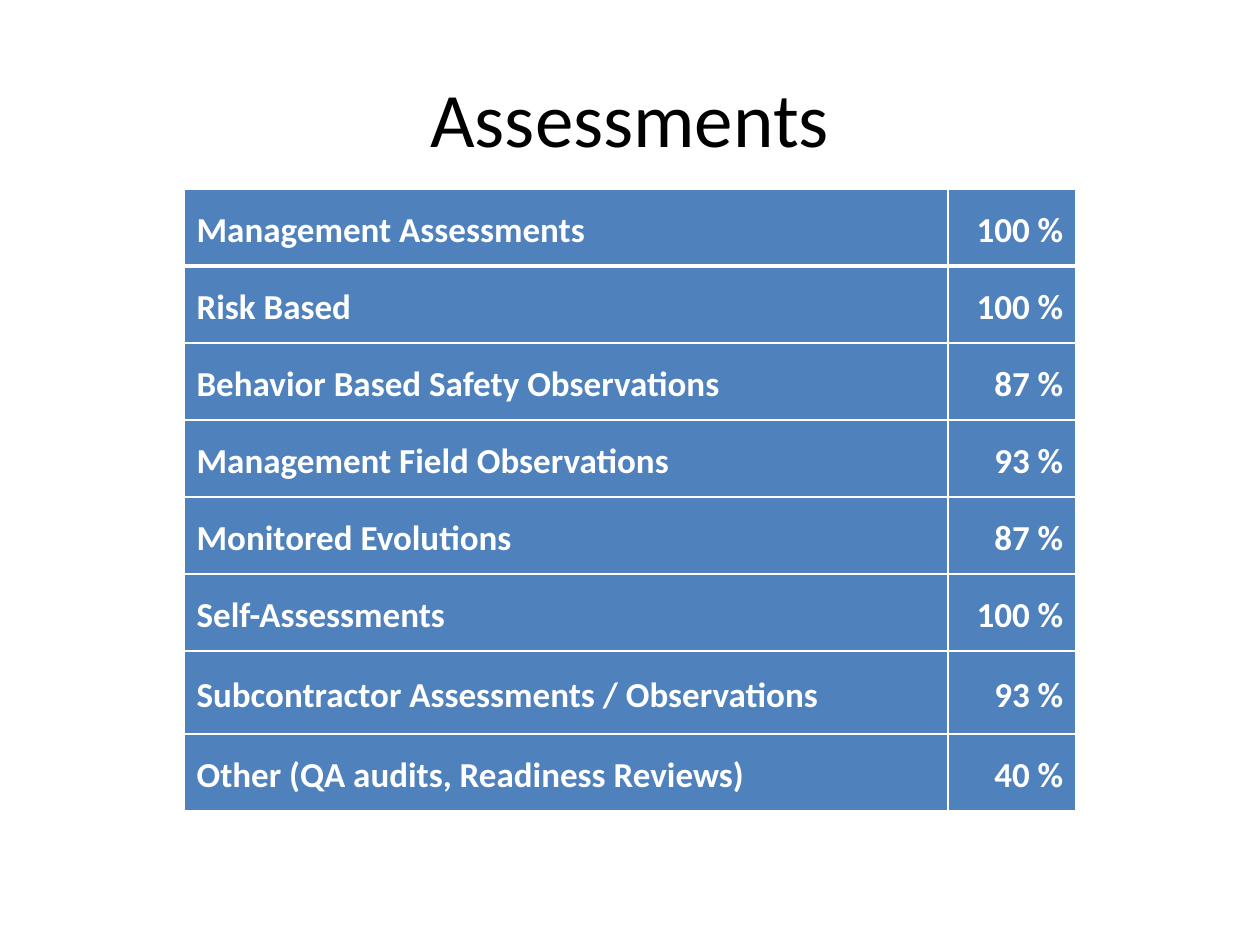
from dataclasses import dataclass

from lxml import etree
from pptx import Presentation
from pptx.dml.color import RGBColor
from pptx.enum.text import MSO_ANCHOR, PP_ALIGN
from pptx.oxml.ns import qn
from pptx.util import Emu, Pt

LEFT, CENTER, RIGHT = PP_ALIGN.LEFT, PP_ALIGN.CENTER, PP_ALIGN.RIGHT
MIDDLE = MSO_ANCHOR.MIDDLE
WHITE = RGBColor(0xFF, 0xFF, 0xFF)
BLACK = RGBColor(0x00, 0x00, 0x00)
BLUE = RGBColor(0x4F, 0x81, 0xBD)
FONT = "Calibri"
PX_PER_INCH = 126
THIN, THICK = 1, 3
COLUMN_WIDTHS = (764, 128)
ROW_HEIGHT, TALL_ROW_HEIGHT = 77, 83


@dataclass(frozen=True)
class Assessment:
    name: str
    percent: int
    height: int = ROW_HEIGHT


ASSESSMENTS = (
    Assessment("Management Assessments", 100),
    Assessment("Risk Based", 100),
    Assessment("Behavior Based Safety Observations", 87),
    Assessment("Management Field Observations", 93),
    Assessment("Monitored Evolutions", 87),
    Assessment("Self-Assessments", 100),
    Assessment("Subcontractor Assessments / Observations", 93, TALL_ROW_HEIGHT),
    Assessment("Other (QA audits, Readiness Reviews)", 40),
)


def px(length: int) -> Emu:
    return Emu(round(length * 914400 / PX_PER_INCH))


def write(para, text: str, size: int, color: RGBColor, align, bold: bool = False) -> None:
    para.text = text
    para.alignment = align
    para.font.name = FONT
    para.font.size = Pt(size)
    para.font.bold = bold
    para.font.color.rgb = color


def set_borders(cell, top: int, bottom: int) -> None:
    properties = cell._tc.get_or_add_tcPr()
    widths = {"a:lnL": THIN, "a:lnR": THIN, "a:lnT": top, "a:lnB": bottom}
    for position, (tag, width) in enumerate(widths.items()):
        line = etree.Element(qn(tag), w=str(Pt(width)))
        fill = etree.SubElement(line, qn("a:solidFill"))
        etree.SubElement(fill, qn("a:srgbClr"), val=str(WHITE))
        properties.insert(position, line)


def draw_title(page, text: str) -> None:
    box = page.shapes.add_textbox(px(63), px(38), px(1134), px(157))
    frame = box.text_frame
    frame.word_wrap = True
    frame.vertical_anchor = MIDDLE
    write(frame.paragraphs[0], text, 44, BLACK, CENTER)


def draw_table(page, assessments: tuple[Assessment, ...]) -> None:
    height = sum(item.height for item in assessments)
    table = page.shapes.add_table(
        len(assessments), len(COLUMN_WIDTHS),
        px(184), px(189), px(sum(COLUMN_WIDTHS)), px(height),
    ).table
    for column, width in zip(table.columns, COLUMN_WIDTHS):
        column.width = px(width)
    for index, item in enumerate(assessments):
        table.rows[index].height = px(item.height)
        top = THICK if index == 1 else THIN
        bottom = THICK if index == 0 else THIN
        entries = ((item.name, LEFT), (f"{item.percent} %", RIGHT))
        for column, (text, align) in enumerate(entries):
            cell = table.cell(index, column)
            cell.fill.solid()
            cell.fill.fore_color.rgb = BLUE
            cell.vertical_anchor = MIDDLE
            para = cell.text_frame.paragraphs[0]
            write(para, text, 20, WHITE, align, bold=True)
            para.line_spacing = 1.15
            set_borders(cell, top, bottom)


def main() -> None:
    deck = Presentation()
    deck.slide_width, deck.slide_height = px(1260), px(945)
    page = deck.slides.add_slide(deck.slide_layouts[6])
    draw_title(page, "Assessments")
    draw_table(page, ASSESSMENTS)
    deck.save("out.pptx")


if __name__ == "__main__":
    main()
